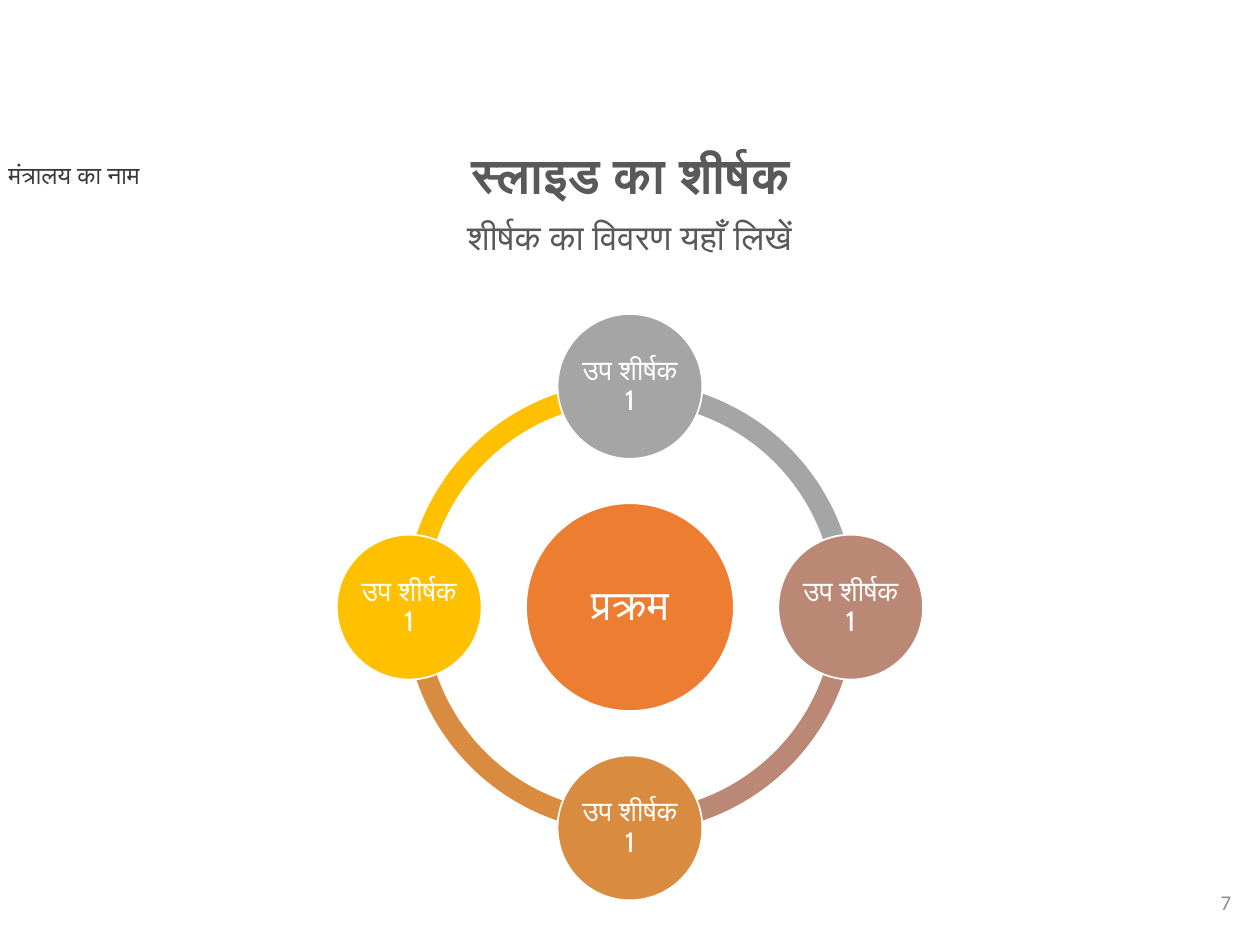
from math import cos, radians, sin

from pptx import Presentation
from pptx import util as u
from pptx.dml.color import RGBColor
from pptx.enum import shapes as sh, text as tx

# Content
TITLE = "स्लाइड का शीर्षक"
SUB = "शीर्षक का विवरण यहाँ लिखें"
OFFICE = "मंत्रालय का नाम"
PAGE = "7"
HUB = "प्रक्रम"
# Label, colour, angle of the node (clockwise from the right)
NODES = [
    ("उप शीर्षक 1", "grey", 270),
    ("उप शीर्षक 1", "rose", 0),
    ("उप शीर्षक 1", "amber", 90),
    ("उप शीर्षक 1", "gold", 180),
]

HEX = {
    "grey": "A5A5A5", "rose": "BB8876", "amber": "D98C3F", "gold": "FFC000",
    "hub": "ED7D31", "white": "FFFFFF", "head": "595959",
    "office": "3B3838", "page": "8C8C8C",
}

# Ring geometry in cm
MID_X, MID_Y = 12.7, 12.24
REACH = 4.45
RING, HUB_D, NODE_D = 9.09, 4.19, 2.92
BAND = 0.046
UNIT = 0.6  # adjustment value per degree of arc


def color(name):
    return RGBColor.from_string(HEX[name])


def write(shape, words, size, name, face="Calibri", bold=False,
          align=tx.PP_ALIGN.CENTER, anchor=tx.MSO_ANCHOR.TOP, space=0.9):
    frame = shape.text_frame
    frame.text = words
    frame.word_wrap = True
    frame.auto_size = tx.MSO_AUTO_SIZE.NONE
    frame.vertical_anchor = anchor
    para = frame.paragraphs[0]
    para.alignment = align
    para.line_spacing = space
    para.space_before = u.Pt(0)
    font = para.font
    font.name, font.size, font.bold = face, u.Pt(size), bold
    font.color.rgb = color(name)


def place(shape, left, top, width, height):
    shape.left, shape.top = u.Cm(left), u.Cm(top)
    shape.width, shape.height = u.Cm(width), u.Cm(height)


def round_shape(kind, x, y, size, name):
    """Add a filled shape of equal sides, centred on x, y."""
    shape = slide.shapes.add_shape(
        kind, u.Cm(x - size / 2), u.Cm(y - size / 2), u.Cm(size), u.Cm(size))
    shape.shadow.inherit = False
    shape.fill.solid()
    shape.fill.fore_color.rgb = color(name)
    shape.line.fill.background()
    return shape


def disc(x, y, size, name, words, points, inset):
    shape = round_shape(sh.MSO_SHAPE.OVAL, x, y, size, name)
    shape.line.color.rgb = color("white")
    shape.line.width = u.Pt(1)
    frame = shape.text_frame
    frame.margin_left = frame.margin_right = u.Cm(inset)
    frame.margin_top = frame.margin_bottom = u.Cm(inset)
    write(shape, words, points, "white", "Cabin", anchor=tx.MSO_ANCHOR.MIDDLE)


deck = Presentation()
deck.slide_width, deck.slide_height = u.Cm(25.4), u.Cm(19.05)
slide = deck.slides.add_slide(deck.slide_layouts[0])

# Headings
head, sub = slide.placeholders
place(head, 4.72, 2.92, 15.98, 1.19)
write(head, TITLE, 28, "head", bold=True)
place(sub, 3.71, 4.32, 17.96, 1.6)
write(sub, SUB, 20, "head")

# Ministry name and page number
office = slide.shapes.add_textbox(0, 0, 0, 0)
place(office, -0.08, 3.1, 5.54, 0.86)
write(office, OFFICE, 14, "office", align=tx.PP_ALIGN.LEFT, space=1.0)
page = slide.shapes.add_textbox(0, 0, 0, 0)
place(page, 19.35, 17.68, 5.72, 1.02)
write(page, PAGE, 12, "page", align=tx.PP_ALIGN.RIGHT,
      anchor=tx.MSO_ANCHOR.MIDDLE, space=1.0)

# Ring: each arc runs from its node to the next
for _, name, turn in NODES:
    arc = round_shape(sh.MSO_SHAPE.BLOCK_ARC, MID_X, MID_Y, RING, name)
    arc.adjustments[0] = turn * UNIT
    arc.adjustments[1] = (turn + 90) % 360 * UNIT
    arc.adjustments[2] = BAND

# Hub and nodes
disc(MID_X, MID_Y, HUB_D, "hub", HUB, 24, 0.08)
for words, name, turn in NODES:
    x = MID_X + REACH * cos(radians(turn))
    y = MID_Y + REACH * sin(radians(turn))
    disc(x, y, NODE_D, name, words, 16, 0.05)

deck.save("out.pptx")
